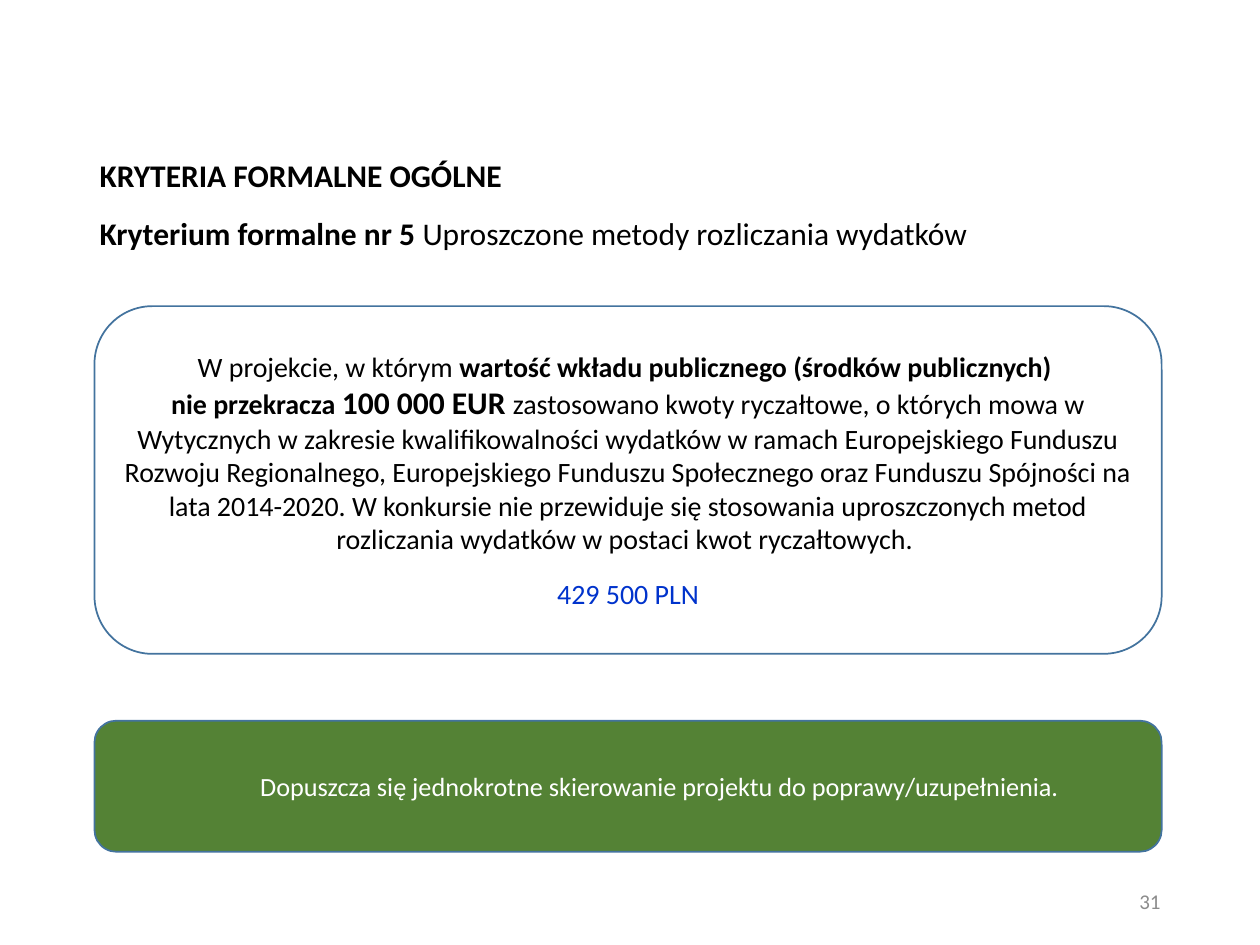
from pptx import Presentation
from pptx import util as u
from pptx.dml.color import RGBColor
from pptx.enum import shapes, text
from pptx.oxml.ns import qn
from lxml import etree

BLACK = RGBColor(0x00, 0x00, 0x00)
WHITE = RGBColor(0xFF, 0xFF, 0xFF)
GREY = RGBColor(0x8C, 0x8C, 0x8C)
GREEN = RGBColor(0x54, 0x82, 0x35)
EDGE = RGBColor(0x43, 0x73, 0x9E)
BLUE = RGBColor(0x00, 0x33, 0xCC)
LEFT, MID, RIGHT = text.PP_ALIGN.LEFT, text.PP_ALIGN.CENTER, text.PP_ALIGN.RIGHT
BREAK = "\n"


class Deck:
    face = "Calibri"

    def __init__(self, wide, high):
        self.prs = Presentation()
        self.prs.slide_width, self.prs.slide_height = u.Inches(wide), u.Inches(high)
        self.slide = self.prs.slides.add_slide(self.prs.slide_layouts[1])

    def para(self, par, runs, size, color=BLACK, align=LEFT, before=0, line=None, indent=0):
        """Fill a paragraph with runs of (words, bold, own size)."""
        props = par._p.get_or_add_pPr()
        props.set("marL", str(u.Inches(indent)))
        props.set("indent", "0")
        etree.SubElement(props, qn("a:buNone"))
        par.alignment, par.space_before = align, u.Pt(before)
        if line:
            par.line_spacing = line
        font = par.font
        font.name, font.size, font.color.rgb = self.face, u.Pt(size), color
        for words, bold, own in runs:
            if words == BREAK:
                par.add_line_break()
                continue
            run = par.add_run()
            run.text, run.font.bold = words, bold
            if own:
                run.font.size = u.Pt(own)

    def frame(self, shape, anchor):
        frame = shape.text_frame
        frame.word_wrap, frame.vertical_anchor = True, anchor
        frame.auto_size = text.MSO_AUTO_SIZE.NONE
        return frame

    def holder(self, index, box, runs, anchor):
        shape = self.slide.placeholders[index]
        shape.left, shape.top, shape.width, shape.height = map(u.Inches, box)
        self.para(self.frame(shape, anchor).paragraphs[0], runs, 18, line=0.9)

    def label(self, box, words, size, color, align):
        shape = self.slide.shapes.add_textbox(*map(u.Inches, box))
        frame = self.frame(shape, text.MSO_ANCHOR.MIDDLE)
        self.para(frame.paragraphs[0], [(words, False, None)], size, color, align)

    def panel(self, box, fill):
        shape = self.slide.shapes.add_shape(
            shapes.MSO_SHAPE.ROUNDED_RECTANGLE, *map(u.Inches, box))
        shape.shadow.inherit = False
        shape.fill.solid()
        shape.fill.fore_color.rgb = fill
        shape.line.color.rgb, shape.line.width = EDGE, u.Pt(1)
        return self.frame(shape, text.MSO_ANCHOR.MIDDLE)


def main():
    deck = Deck(10, 7.5)

    # Heading and criterion
    deck.holder(0, (0.69, 1.05, 8.62, 0.71),
                [("KRYTERIA FORMALNE OGÓLNE", True, None)], text.MSO_ANCHOR.MIDDLE)
    deck.holder(1, (0.69, 1.68, 8.62, 0.7),
                [("Kryterium formalne nr 5", True, None),
                 (" Uproszczone metody rozliczania wydatków", False, None)],
                text.MSO_ANCHOR.TOP)

    # Page number
    deck.label((7.06, 6.95, 2.25, 0.4), "31", 12, GREY, RIGHT)

    # Rule with its limit in PLN
    rule = deck.panel((0.75, 2.43, 8.47, 2.76), WHITE)
    deck.para(rule.paragraphs[0], [
        ("W projekcie, w którym ", False, None),
        ("wartość wkładu publicznego (środków publicznych) ", True, None),
        (BREAK, None, None),
        ("nie przekracza ", True, None),
        ("100 000 EUR ", True, 18),
        ("zastosowano kwoty ryczałtowe, o których mowa w Wytycznych w zakresie "
         "kwalifikowalności wydatków w ramach Europejskiego Funduszu Rozwoju "
         "Regionalnego, Europejskiego Funduszu Społecznego oraz Funduszu Spójności "
         "na lata 2014-2020. W konkursie nie przewiduje się stosowania uproszczonych "
         "metod rozliczania wydatków w postaci kwot ryczałtowych. ", False, None),
    ], 16, align=MID)
    deck.para(rule.add_paragraph(), [("429 500 PLN", False, None)], 16, BLUE, MID, before=12)

    # Note on corrections
    note = deck.panel((0.75, 5.72, 8.47, 1.04), GREEN).paragraphs[0]
    note.level = 1
    deck.para(note, [("Dopuszcza się jednokrotne skierowanie projektu do "
                      "poprawy/uzupełnienia.", False, None)], 15, WHITE, MID, indent=0.5)

    deck.prs.save("out.pptx")


if __name__ == "__main__":
    main()
